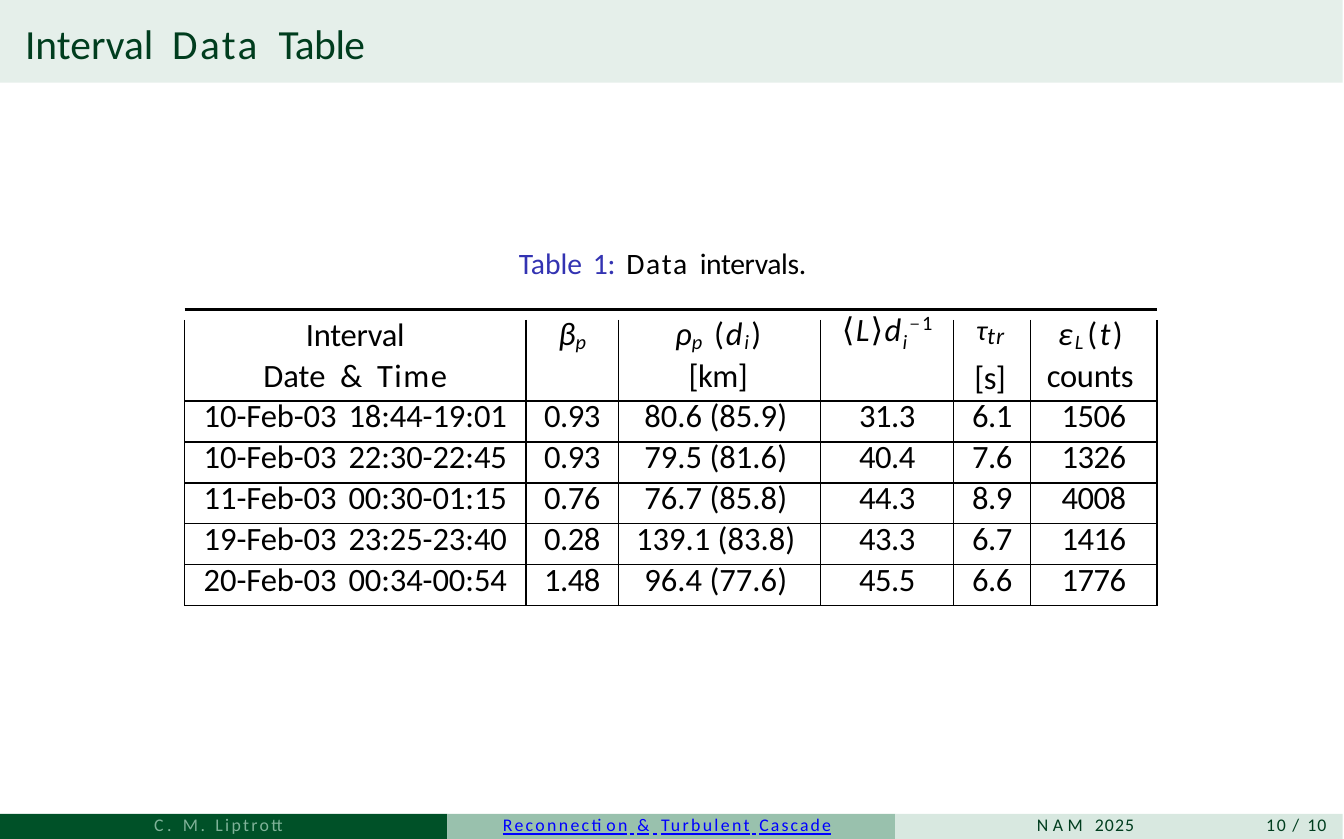
from dataclasses import dataclass

from lxml import etree
from pptx import Presentation
from pptx.dml.color import RGBColor
from pptx.enum.shapes import MSO_CONNECTOR, MSO_SHAPE
from pptx.enum.text import PP_ALIGN
from pptx.oxml.ns import qn
from pptx.util import Pt

RECT = MSO_SHAPE.RECTANGLE
STRAIGHT = MSO_CONNECTOR.STRAIGHT
LEFT, CENTER = PP_ALIGN.LEFT, PP_ALIGN.CENTER
PLAIN_TABLE = "{2D5ABB26-0587-4C30-8999-92F81FD0307C}"


@dataclass(frozen=True)
class Theme:
    """Colours, fonts and type sizes."""
    font: str = "Calibri"
    math_font: str = "Cambria"
    black: str = "000000"
    title: str = "003D1E"
    title_bar: str = "E5EFEA"
    caption: str = "3333B2"
    link: str = "0000FF"
    author: str = "7FB298"
    footer_bars: tuple = ("005128", "99C1AD", "D8E8E0")
    title_size: float = 14
    caption_size: float = 10
    table_size: float = 11
    footer_size: float = 6
    word_gap: float = 0.14
    wide_gap: float = 0.22


T = Theme()

STYLES = {
    "text": {},
    "sym": {"italic": True},
    "sub": {"italic": True, "size": 12, "base": -10},
    "low": {"italic": True, "size": 12, "base": -24},
    "sup": {"size": 12, "base": 31},
    "minus": {"size": 12, "base": 31, "font": T.math_font},
    "bracket": {"font": T.math_font},
    "tau": {"italic": True, "size": 16.5, "base": 8},
    "tr": {"italic": True, "size": 8},
    "caption": {"color": T.caption},
    "link": {"underline": True},
}

HEADERS = [
    [[("Interval", "text", -0.1)], [("Date & ", "text", 0), ("Time", "text", 0.5)]],
    [[("β", "sym", -0.2), ("p", "sub", -0.4)]],
    [[("ρ", "sym", 0), ("p ", "sub", 0), ("(", "text", 0.6), ("d", "sym", 0.6),
      ("i", "sub", 0.8), (")", "text", 0.6)], [("[km]", "text", -0.2)]],
    [[("⟨", "bracket", 0.4), ("L", "sym", 0.4), ("⟩", "bracket", 0.4),
      ("d", "sym", 0.4), ("i", "low", 0.6), ("−", "minus", 0.6), ("1", "sup", 0.6)]],
    [[("τ", "tau", 0), ("tr", "tr", 0.4)], [("[s]", "text", -0.2)]],
    [[("ε", "sym", 0.8), ("L", "sub", 1.3), ("(", "text", 0.8), ("t", "sym", 0.8),
      (")", "text", 0.8)], [("counts", "text", -0.1)]],
]
ROWS = [
    ("10-Feb-03 18:44-19:01", "0.93", "80.6 (85.9)", "31.3", "6.1", "1506"),
    ("10-Feb-03 22:30-22:45", "0.93", "79.5 (81.6)", "40.4", "7.6", "1326"),
    ("11-Feb-03 00:30-01:15", "0.76", "76.7 (85.8)", "44.3", "8.9", "4008"),
    ("19-Feb-03 23:25-23:40", "0.28", "139.1 (83.8)", "43.3", "6.7", "1416"),
    ("20-Feb-03 00:34-00:54", "1.48", "96.4 (77.6)", "45.5", "6.6", "1776"),
]
COL_WIDTHS = (115.3, 31.3, 68.3, 44.9, 26.1, 42.6)
COL_SPACING = (-0.05, -0.2, 0, -0.2, -0.2, -0.2)
HEAD_INSETS = (0, 0, 1, 0, 1.4, 2.4)
BODY_INSETS = (0, 0, 2.6, 0, 0, 0)
HEAD_LEADING = (11.9, 11.9, 11.9, 11.9, 12.6, 11.9)
HEAD_HEIGHT, ROW_HEIGHT = 27.4, 13.86


def rgb(code):
    """Return a colour from its hex code."""
    return RGBColor.from_string(code)


def add_run(p, text, spacing, size=None, base=0, italic=None, font=None,
            color=None, underline=None):
    """Add one run with letter spacing and optional script shift."""
    r = p.add_run()
    r.text = text
    if size:
        r.font.size = Pt(size)
    if font:
        r.font.name = font
    if color:
        r.font.color.rgb = rgb(color)
    r.font.italic, r.font.underline = italic, underline
    rpr = r.font._element
    rpr.set("spc", str(round(spacing * 100)))
    if base:
        rpr.set("baseline", str(base * 1000))


def write(p, runs, size, color, align=LEFT, gap=T.word_gap):
    """Fill a paragraph with styled runs, widening the word gaps."""
    p.alignment = align
    p.font.name, p.font.size = T.font, Pt(size)
    p.font.color.rgb = rgb(color)
    for text, style, spacing in runs:
        for i, word in enumerate(text.split(" ")):
            if i:
                add_run(p, " ", gap * size, **STYLES[style])
            if word:
                add_run(p, word, spacing, **STYLES[style])


def add_text(slide, x, y, w, h, runs, size, color, **kw):
    """Place a one-line text box without margins."""
    tf = slide.shapes.add_textbox(Pt(x), Pt(y), Pt(w), Pt(h)).text_frame
    tf.word_wrap = True
    tf.margin_left = tf.margin_right = tf.margin_top = tf.margin_bottom = 0
    write(tf.paragraphs[0], runs, size, color, **kw)
    return tf.paragraphs[0]


def add_bar(slide, x, y, w, h, color):
    """Draw a plain filled bar."""
    s = slide.shapes.add_shape(RECT, Pt(x), Pt(y), Pt(w), Pt(h))
    s.shadow.inherit = False
    s.fill.solid()
    s.fill.fore_color.rgb = rgb(color)
    s.line.fill.background()


def add_title(slide, x, y, w, h):
    """Draw the title bar and its text."""
    add_bar(slide, x, y, w, h, T.title_bar)
    runs = [("Interval ", "text", 0), ("Data ", "text", 0.8), ("Table", "text", -0.2)]
    p = add_text(slide, x + 8.5, y + 6.1, 150, 19, runs, T.title_size, T.title, gap=T.wide_gap)
    p.space_before = Pt(1.4)


def add_caption(slide, x, y, w, h):
    """Write the table caption."""
    runs = [("Table 1: ", "caption", 0), ("Data ", "text", 0.6), ("intervals.", "text", -0.1)]
    p = add_text(slide, x, y, w, h, runs, T.caption_size, T.black)
    p.space_before = Pt(0.9)


def set_borders(cell, top):
    """Outline a cell with thin black lines, the top one optional."""
    tcpr = cell._tc.get_or_add_tcPr()
    for i, side in enumerate("LRTB"):
        ln = etree.Element(qn("a:ln" + side), w=str(Pt(0.5)))
        if side == "T" and not top:
            etree.SubElement(ln, qn("a:noFill"))
        else:
            fill = etree.SubElement(ln, qn("a:solidFill"))
            etree.SubElement(fill, qn("a:srgbClr"), val=T.black)
        tcpr.insert(i, ln)


def add_data_table(slide, x, y, w, h):
    """Draw the top rule and the interval table."""
    s = slide.shapes.add_connector(STRAIGHT, Pt(x), Pt(y), Pt(x + w), Pt(y))
    s.line.color.rgb, s.line.width = rgb(T.black), Pt(0.87)
    etree.SubElement(s._element.spPr, qn("a:effectLst"))
    body = [[[[(text, "text", spc)]] for text, spc in zip(row, COL_SPACING)] for row in ROWS]
    grid = [HEADERS] + body
    frame = slide.shapes.add_table(len(grid), len(COL_WIDTHS), Pt(x), Pt(y + 3.6),
                                   Pt(w), Pt(h - 3.6))
    table = frame.table
    table.first_row = table.horz_banding = False
    table._tbl.tblPr[0].text = PLAIN_TABLE
    for col, width in zip(table.columns, COL_WIDTHS):
        col.width = Pt(width)
    for i, row in enumerate(grid):
        table.rows[i].height = Pt(ROW_HEIGHT if i else HEAD_HEIGHT)
        for j, lines in enumerate(row):
            cell = table.cell(i, j)
            cell.margin_left = cell.margin_top = cell.margin_bottom = 0
            cell.margin_right = Pt((BODY_INSETS if i else HEAD_INSETS)[j])
            cell.fill.background()
            set_borders(cell, i > 0)
            tf = cell.text_frame
            gap = T.wide_gap if i == 0 else 0 if j == 2 else T.word_gap
            for k, runs in enumerate(lines):
                p = tf.add_paragraph() if k else tf.paragraphs[0]
                write(p, runs, T.table_size, T.black, CENTER, gap)
                if k:
                    p.space_before = Pt(0.3)
                else:
                    p.line_spacing = Pt(11.9 if i else HEAD_LEADING[j])


def add_footer(slide, x, y, w, h):
    """Draw the three footer bars and their labels."""
    part = w / len(T.footer_bars)
    for i, color in enumerate(T.footer_bars):
        add_bar(slide, x + i * part, y, part, h, color)
    labels = [
        (52.1, 60, T.author, 0.2,
         [("C. ", "text", 1.2), ("M. ", "text", 0.9), ("Liptrott", "text", 0.8)]),
        (169.9, 125, T.link, 0.2, [("Reconnection ", "link", 0.8), ("& ", "link", 1.4),
                                   ("Turbulent ", "link", 0.8), ("Cascade", "link", 0.7)]),
        (350.3, 45, T.title, 0.2, [("NAM ", "text", 1.5), ("2025", "text", 0.4)]),
        (427.7, 25, T.title, 0.04,
         [("10 ", "text", 0.6), ("/ ", "text", 1.2), ("10", "text", 0.3)]),
    ]
    for left, width, color, gap, runs in labels:
        p = add_text(slide, x + left, y + 0.5, width, 7.9, runs, T.footer_size, color, gap=gap)
        p.line_spacing = Pt(6.7)


def main():
    """Build the slide and save it."""
    prs = Presentation()
    prs.slide_width, prs.slide_height = Pt(454), Pt(283.5)
    slide = prs.slides.add_slide(prs.slide_layouts[6])
    add_title(slide, 0, 0, 453.6, 28)
    add_caption(slide, 175.3, 82.8, 110, 13.7)
    add_data_table(slide, 62.4, 104.5, sum(COL_WIDTHS), 100.3)
    add_footer(slide, 0, 275, 453.6, 8.5)
    prs.save("out.pptx")


if __name__ == "__main__":
    main()
